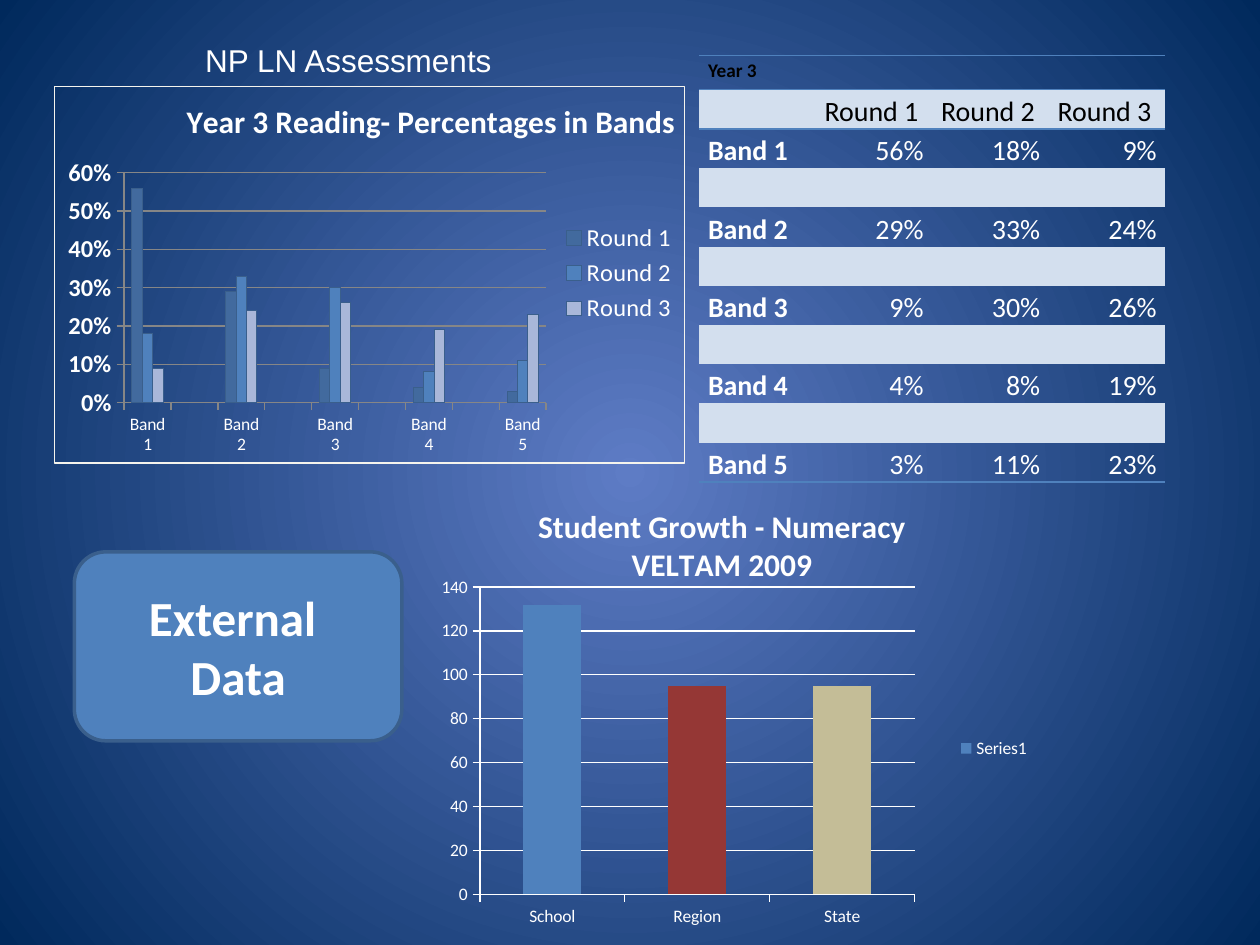
from lxml import etree
from pptx import Presentation
from pptx.chart.data import CategoryChartData
from pptx.dml.color import RGBColor
from pptx.enum.chart import XL_CHART_TYPE, XL_LEGEND_POSITION, XL_TICK_MARK
from pptx.enum.shapes import MSO_SHAPE
from pptx.enum.text import MSO_ANCHOR, MSO_AUTO_SIZE, PP_ALIGN
from pptx.oxml import parse_xml
from pptx.oxml.ns import nsdecls, qn
from pptx.util import Inches, Pt

COLUMNS = XL_CHART_TYPE.COLUMN_CLUSTERED
LEGEND_RIGHT = XL_LEGEND_POSITION.RIGHT
TICK_OUTSIDE = XL_TICK_MARK.OUTSIDE
ROUNDED = MSO_SHAPE.ROUNDED_RECTANGLE
MIDDLE = MSO_ANCHOR.MIDDLE
FIT_SHAPE = MSO_AUTO_SIZE.SHAPE_TO_FIT_TEXT
LEFT, CENTER, RIGHT = PP_ALIGN.LEFT, PP_ALIGN.CENTER, PP_ALIGN.RIGHT

WHITE, BLACK, BLUE, DARK_BLUE = "FFFFFF", "000000", "4F81BD", "3A5F8C"
PALE_BLUE, GREY = "D3DFEE", "868686"
NO_STYLE = "{2D5ABB26-0587-4C30-8999-92F81FD0307C}"
ROUNDS = ["Round 1", "Round 2", "Round 3"]
ROUND_COLORS = ["426A9E", BLUE, "A9B7D9"]
BANDS = {
    "Band 1": [56, 18, 9],
    "Band 2": [29, 33, 24],
    "Band 3": [9, 30, 26],
    "Band 4": [4, 8, 19],
    "Band 5": [3, 11, 23],
}


def color(value):
    return RGBColor.from_string(value)


def style_font(font, size, ink=WHITE, bold=False, name="Calibri"):
    font.size = Pt(size)
    font.bold = bold
    font.name = name
    font.color.rgb = color(ink)


def add_span(para, text, size, **style):
    span = para.add_run()
    span.text = text
    style_font(span.font, size, **style)


def paint_background(slide):
    fill = slide.background.fill
    fill.gradient()
    for stop, shade in zip(fill.gradient_stops, ["5E7CC5", "00295C"]):
        stop.color.rgb = color(shade)
    gradient = slide._element.find(".//" + qn("a:gradFill"))
    gradient.remove(gradient.find(qn("a:lin")))
    circle = etree.SubElement(gradient, qn("a:path"))
    circle.set("path", "circle")
    center = etree.SubElement(circle, qn("a:fillToRect"))
    for side in "ltrb":
        center.set(side, "50000")


def place(parent, before, **layout):
    for old in parent.findall(qn("c:layout")):
        parent.remove(old)
    holder = etree.Element(qn("c:layout"))
    manual = etree.SubElement(holder, qn("c:manualLayout"))
    if "w" in layout:
        etree.SubElement(manual, qn("c:layoutTarget")).set("val", "inner")
    for side in "xy":
        etree.SubElement(manual, qn(f"c:{side}Mode")).set("val", "edge")
    for key, value in layout.items():
        etree.SubElement(manual, qn(f"c:{key}")).set("val", str(value))
    parent.find(qn(before)).addprevious(holder)


def add_title(chart, lines, x, y):
    chart.has_title = True
    frame = chart.chart_title.text_frame
    for index, line in enumerate(lines):
        para = frame.add_paragraph() if index else frame.paragraphs[0]
        add_span(para, line, 18, bold=True)
    title = chart.chart_title._element
    title.find(qn("c:overlay")).set("val", "1")
    place(title, "c:overlay", x=x, y=y)


def add_legend(chart, size, x, y):
    chart.has_legend = True
    legend = chart.legend
    legend.position = LEGEND_RIGHT
    legend.include_in_layout = False
    style_font(legend.font, size)
    place(legend._element, "c:overlay", x=x, y=y)


def style_axes(chart, line_color, top, step, size, bold):
    values, categories = chart.value_axis, chart.category_axis
    values.minimum_scale, values.maximum_scale = 0, top
    values.major_unit = step
    values.has_major_gridlines = True
    style_font(values.tick_labels.font, size, bold=bold)
    style_font(categories.tick_labels.font, 10)
    for axis in (values, categories):
        axis.major_tick_mark = TICK_OUTSIDE
        axis.format.line.color.rgb = color(line_color)
    values.major_gridlines.format.line.color.rgb = color(line_color)


def add_columns(slide, box, categories, series, number_format):
    data = CategoryChartData(number_format=number_format)
    data.categories = categories
    for name, values in series.items():
        data.add_series(name, values)
    chart = slide.shapes.add_chart(COLUMNS, *map(Inches, box), data).chart
    style_font(chart.font, 10)
    plot = chart.plots[0]
    plot.gap_width = 150
    plot.overlap = 0
    plot.vary_by_categories = False
    return chart


def add_border(chart, line_color):
    chart._chartSpace.find(qn("c:chart")).addnext(parse_xml(
        f'<c:spPr {nsdecls("c", "a")}><a:noFill/><a:ln w="9525"><a:solidFill>'
        f'<a:srgbClr val="{line_color}"/></a:solidFill></a:ln></c:spPr>'))


def add_reading_chart(slide):
    categories, series = [], {name: [] for name in ROUNDS}
    for band, shares in BANDS.items():
        gap = [""] if categories else []
        categories += gap + [band]
        for name, share in zip(ROUNDS, shares):
            series[name] += [None] * len(gap) + [share / 100]
    chart = add_columns(slide, (0.43, 0.68, 5.01, 3), categories, series, "0%")
    for item, shade in zip(chart.plots[0].series, ROUND_COLORS):
        item.format.fill.solid()
        item.format.fill.fore_color.rgb = color(shade)
        item.format.line.color.rgb = color(DARK_BLUE)
    add_title(chart, ["Year 3 Reading- Percentages in Bands"], 0.2, 0.02)
    add_legend(chart, 14, 0.8, 0.35)
    style_axes(chart, GREY, 0.6, 0.1, 14, True)
    place(chart._chartSpace.chart.plotArea, "c:barChart", x=0.11, y=0.23, w=0.67, h=0.61)
    add_border(chart, "F5F4ED")


def add_growth_chart(slide):
    chart = add_columns(slide, (3.27, 3.91, 5.39, 3.75), ["School", "Region", "State"],
                        {"Series1": [132, 95, 95]}, "General")
    series = chart.plots[0].series[0]
    fills = [series.format.fill] + [series.points[i].format.fill for i in (1, 2)]
    for fill, shade in zip(fills, [BLUE, "953735", "C4BD97"]):
        fill.solid()
        fill.fore_color.rgb = color(shade)
    add_title(chart, ["Student Growth - Numeracy", "VELTAM 2009"], 0.18, 0.02)
    add_legend(chart, 10, 0.8, 0.51)
    style_axes(chart, WHITE, 140, 20, 10, False)
    place(chart._chartSpace.chart.plotArea, "c:barChart", x=0.1, y=0.2, w=0.64, h=0.65)


def add_cell_edge(cell, side):
    cell._tc.get_or_add_tcPr().insert(0, parse_xml(
        f'<a:ln{side} {nsdecls("a")} w="12700"><a:solidFill>'
        f'<a:srgbClr val="{BLUE}"/></a:solidFill></a:ln{side}>'))


def fill_cell(cell, text, size, shaded, align, **style):
    cell.margin_left = cell.margin_right = Inches(0.07)
    cell.margin_top = cell.margin_bottom = 0
    if shaded:
        cell.fill.solid()
        cell.fill.fore_color.rgb = color(PALE_BLUE)
    else:
        cell.fill.background()
    para = cell.text_frame.paragraphs[0]
    para.alignment = align
    para.line_spacing = 1.15
    if text:
        add_span(para, text, size, **style)
    else:
        para._p.get_or_add_endParaRPr().set("sz", str(size * 100))


def add_band_table(slide):
    rows = [["Year 3", "", "", ""]]
    for band, shares in BANDS.items():
        rows.append(["", "", "", ""] if len(rows) > 1 else [""] + ROUNDS)
        rows.append([band] + [f"{share}%" for share in shares])
    table = slide.shapes.add_table(len(rows), 4, Inches(5.55), Inches(0.44),
                                   Inches(3.7), Inches(3.37)).table
    table.first_row = table.horz_banding = False
    table._tbl.tblPr.find(qn("a:tableStyleId")).text = NO_STYLE
    for r, texts in enumerate(rows):
        table.rows[r].height = Inches(0.31 if r else 0.27)
        for c, text in enumerate(texts):
            cell = table.cell(r, c)
            fill_cell(cell, text, 16 if r else 11, r % 2 == 1,
                      RIGHT if r > 1 and c else LEFT,
                      ink=BLACK if r < 2 else WHITE, bold=c == 0)
            if r in (0, len(rows) - 1):
                add_cell_edge(cell, "B")
            if r < 2:
                add_cell_edge(cell, "T")


def add_label(slide):
    box = slide.shapes.add_shape(ROUNDED, Inches(0.59), Inches(4.38), Inches(2.6), Inches(1.5))
    box.shadow.inherit = False
    box.fill.solid()
    box.fill.fore_color.rgb = color(BLUE)
    box.line.color.rgb = color(DARK_BLUE)
    box.line.width = Pt(2)
    frame = box.text_frame
    frame.vertical_anchor = MIDDLE
    for para, text in zip([frame.paragraphs[0], frame.add_paragraph()], ["External ", "Data"]):
        para.alignment = CENTER
        add_span(para, text, 28, bold=True)


def add_heading(slide):
    box = slide.shapes.add_textbox(Inches(1.53), Inches(0.28), Inches(2.5), Inches(0.4))
    frame = box.text_frame
    frame.word_wrap = False
    frame.auto_size = FIT_SHAPE
    add_span(frame.paragraphs[0], "NP LN Assessments", 18, name="Arial")


def main():
    deck = Presentation()
    deck.slide_width, deck.slide_height = Inches(10), Inches(7.5)
    slide = deck.slides.add_slide(deck.slide_layouts[6])
    paint_background(slide)
    add_growth_chart(slide)
    add_reading_chart(slide)
    add_band_table(slide)
    add_label(slide)
    add_heading(slide)
    deck.save("out.pptx")


if __name__ == "__main__":
    main()
